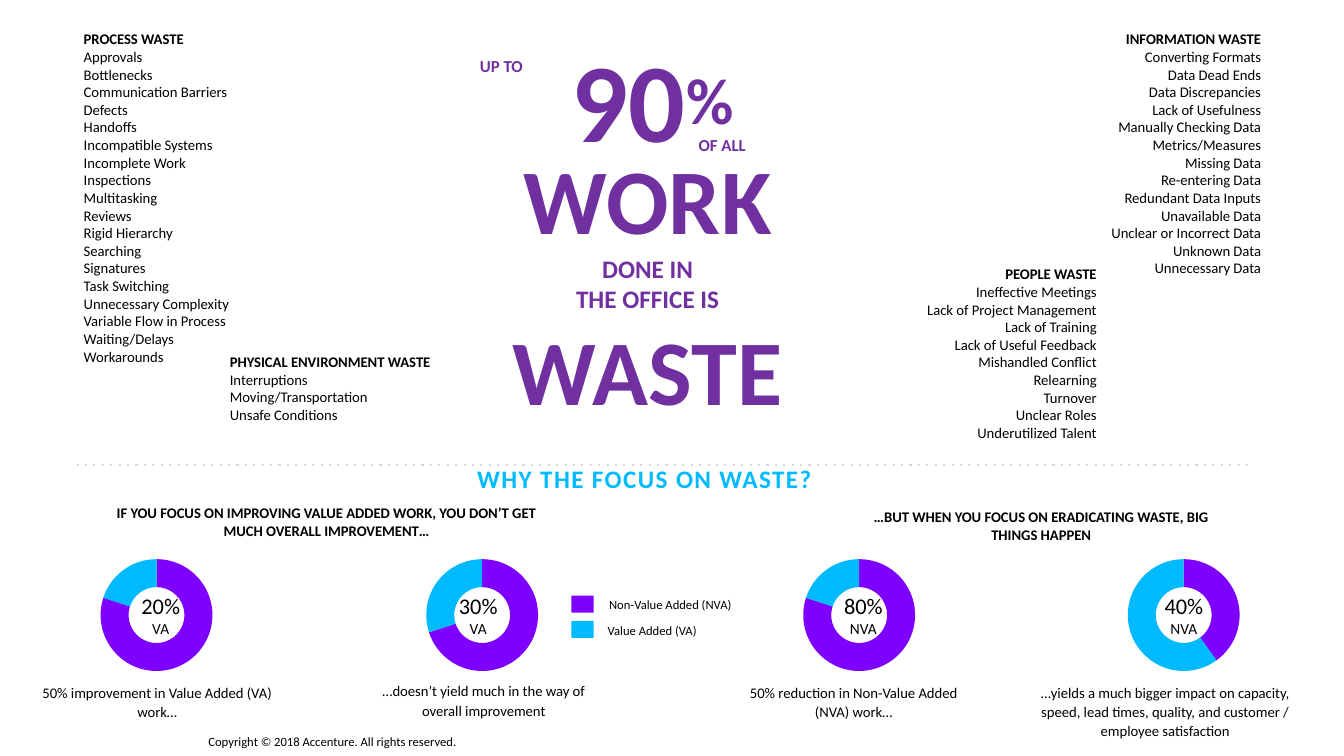
from lxml import etree
from pptx import Presentation
from pptx import util as u
from pptx.chart import data
from pptx.dml.color import RGBColor
from pptx.enum import chart as charts, shapes, text
from pptx.oxml import parse_xml
from pptx.oxml.ns import nsdecls, qn

Pt = u.Pt
FONT = "Calibri"
BLACK = RGBColor(0x00, 0x00, 0x00)
PLUM = RGBColor(0x70, 0x30, 0xA0)
VIOLET = RGBColor(0x7E, 0x00, 0xFF)
CYAN = RGBColor(0x00, 0xBA, 0xFF)
GREY = RGBColor(0xD8, 0xD8, 0xD8)
LEFT, MID, RIGHT = text.PP_ALIGN.LEFT, text.PP_ALIGN.CENTER, text.PP_ALIGN.RIGHT

PROCESS = ["PROCESS WASTE", "Approvals", "Bottlenecks", "Communication Barriers",
           "Defects", "Handoffs", "Incompatible Systems", "Incomplete Work",
           "Inspections", "Multitasking", "Reviews", "Rigid Hierarchy", "Searching",
           "Signatures", "Task Switching", "Unnecessary Complexity",
           "Variable Flow in Process", "Waiting/Delays", "Workarounds"]
PLACE = ["PHYSICAL ENVIRONMENT WASTE", "Interruptions", "Moving/Transportation",
         "Unsafe Conditions"]
INFO = ["INFORMATION WASTE", "Converting Formats", "Data Dead Ends",
        "Data Discrepancies", "Lack of Usefulness", "Manually Checking Data",
        "Metrics/Measures", "Missing Data", "Re-entering Data",
        "Redundant Data Inputs", "Unavailable Data", "Unclear or Incorrect Data",
        "Unknown Data", "Unnecessary Data"]
PEOPLE = ["PEOPLE WASTE", "Ineffective Meetings", "Lack of Project Management",
          "Lack of Training", "Lack of Useful Feedback", "Mishandled Conflict",
          "Relearning", "Turnover", "Unclear Roles", "Underutilized Talent"]


def write(slide, box, lines, align=MID, color=BLACK, inset=(0, 0), gap=None):
    """Add a text box; each line is (words, size, bold, tracking in points)."""
    frame = slide.shapes.add_textbox(*map(Pt, box)).text_frame
    frame.word_wrap = True
    frame.margin_left = frame.margin_right = Pt(inset[0])
    frame.margin_top = frame.margin_bottom = Pt(inset[1])
    for i, (words, size, bold, track) in enumerate(lines):
        para = frame.add_paragraph() if i else frame.paragraphs[0]
        para.alignment = align
        if gap:
            para.line_spacing = gap
        font = para.font
        font.name, font.size, font.bold = FONT, Pt(size), bold
        font.color.rgb = color
        run = para.add_run()
        run.text = words
        if track:
            run._r.get_or_add_rPr().set("spc", str(round(track * 100)))
    return frame


def waste(slide, box, names, align):
    """List one kind of waste under its bold heading."""
    lines = [(name, 10.5, i == 0, 0) for i, name in enumerate(names)]
    write(slide, box, lines, align)


def claim(slide, x, y):
    """Set the large central statement."""
    pad = (7.2, 3.6)
    frame = write(slide, (x + 3.6, y, 347.8, 104.4), [("90", 80, True, 0.3)],
                  color=PLUM, inset=pad)
    sign = frame.paragraphs[0].add_run()
    sign.text = "%"
    props = sign._r.get_or_add_rPr()
    props.set("spc", "30")
    props.set("baseline", "16000")
    for words, dx, dy in [("UP TO", 33.8, 18), ("OF ALL", 191.5, 74.9)]:
        write(slide, (x + dx, y + dy, 71.3, 21.6), [(words, 12, True, 0)],
              color=PLUM, inset=pad)
    write(slide, (x, y + 79.9, 347.8, 211),
          [("WORK", 66, True, 0.3), ("DONE IN", 18, True, 0),
           ("THE OFFICE IS", 18, True, 0), ("WASTE", 66, True, 0.3)],
          color=PLUM, inset=pad)


def rule(slide, x, y, w):
    line = slide.shapes.add_connector(shapes.MSO_CONNECTOR.STRAIGHT,
                                      Pt(x), Pt(y), Pt(x + w), Pt(y))
    line.line.color.rgb = GREY
    line.line.width = Pt(1.5)
    props = line._element.spPr
    etree.SubElement(props.find(qn("a:ln")), qn("a:prstDash")).set("val", "dot")
    etree.SubElement(props, qn("a:effectLst"))


def ring(slide, x, y, share):
    """Draw a doughnut with the given non-value-added share."""
    w, h, size = 98.6, 106.6, 80
    info = data.CategoryChartData()
    info.categories = ["1", "2"]
    info.add_series("Series 1", (share, 100 - share))
    chart = slide.shapes.add_chart(charts.XL_CHART_TYPE.DOUGHNUT,
                                   Pt(x), Pt(y), Pt(w), Pt(h), info).chart
    chart.has_legend = chart.has_title = False
    chart.font.name, chart.font.size = FONT, Pt(18)
    chart.font.color.rgb = BLACK
    plot = chart.plots[0]
    plot.vary_by_categories = True
    for i, color in enumerate((VIOLET, CYAN)):
        part = plot.series[0].points[i].format
        part.fill.solid()
        part.fill.fore_color.rgb = color
        part.line.fill.background()
    area = chart._chartSpace.find(".//" + qn("c:plotArea"))
    area.find(".//" + qn("c:holeSize")).set("val", "80")
    old = area.find(qn("c:layout"))
    if old is not None:
        area.remove(old)
    spots = {"x": (1 - size / w) / 2, "y": (1 - size / h) / 2,
             "w": size / w, "h": size / h}
    marks = "".join(f'<c:{k} val="{v:.3f}"/>' for k, v in spots.items())
    area.insert(0, parse_xml(
        f'<c:layout {nsdecls("c")}><c:manualLayout><c:layoutTarget val="inner"/>'
        f'<c:xMode val="edge"/><c:yMode val="edge"/>{marks}'
        '</c:manualLayout></c:layout>'))


def result(slide, x, y, share, label, unit, shift, note, box):
    """Place a ring, its inner label and the note below it."""
    ring(slide, x, y, share)
    write(slide, (x + shift, y + 37.2, 46.8, 33.1),
          [(label, 16, False, 0), (unit, 11, False, 0)])
    dx, dy, w, h = box
    write(slide, (x + dx, y + dy, w, h), [(note, 10.5, False, 0)], gap=1.1)


def legend(slide, x, y):
    keys = [("Non-Value Added (NVA)", VIOLET, 110.9), ("Value Added (VA)", CYAN, 85)]
    for i, (name, color, w) in enumerate(keys):
        top = y + 18 * i
        key = slide.shapes.add_shape(shapes.MSO_SHAPE.RECTANGLE,
                                     Pt(x), Pt(top), Pt(15.8), Pt(12.2))
        key.shadow.inherit = False
        key.fill.solid()
        key.fill.fore_color.rgb = color
        key.line.fill.background()
        write(slide, (x + 15.1, top, w, 13), [(name, 9, False, 0)], gap=1.1)


def focus(slide, x, y):
    """Fill the lower half: title, two findings, four rings and the key."""
    rule(slide, x, y, 840.2)
    write(slide, (x + 246.2, y - 0.7, 319, 21.6),
          [("WHY THE FOCUS ON WASTE?", 18, True, 1)], color=CYAN)
    heads = [
        (27.4, 28.1, 302.4, "IF YOU FOCUS ON IMPROVING VALUE ADDED WORK, "
         "YOU DON’T GET MUCH OVERALL IMPROVEMENT…"),
        (554.4, 31, 269.3, "…BUT WHEN YOU FOCUS ON ERADICATING WASTE, "
         "BIG THINGS HAPPEN")]
    for dx, dy, w, words in heads:
        write(slide, (x + dx, y + dy, w, 25.2), [(words, 10.5, True, 0)])
    rings = [
        (7.9, 80, "20%", "VA", 28.8, "50% improvement in Value Added (VA) work…",
         (-33.8, 101.2, 167, 31)),
        (240.5, 70, "30%", "VA", 23, "…doesn’t yield much in the way of overall "
         "improvement", (-33.1, 100, 167, 31)),
        (509.8, 80, "80%", "NVA", 28.8, "50% reduction in Non-Value Added (NVA) work…",
         (-38.2, 101.2, 167, 31)),
        (741.6, 40, "40%", "NVA", 25.9, "…yields a much bigger impact on capacity, "
         "speed, lead times, quality, and customer / employee satisfaction",
         (-62.6, 100.8, 197.3, 43.2))]
    for dx, *rest in rings:
        result(slide, x + dx, y + 54.2, *rest)
    legend(slide, x + 353.5, y + 93.6)


def main():
    deck = Presentation()
    deck.slide_width, deck.slide_height = Pt(960), Pt(540)
    slide = deck.slides.add_slide(deck.slide_layouts[6])
    waste(slide, (59.8, 21.6, 139, 261.4), PROCESS, LEFT)
    waste(slide, (164.2, 252, 146.9, 67), PLACE, LEFT)
    waste(slide, (761.8, 21.6, 139, 175), INFO, RIGHT)
    waste(slide, (644.4, 189.4, 139, 126), PEOPLE, RIGHT)
    claim(slide, 288.7, 18)
    focus(slide, 54.7, 331.9)
    write(slide, (141.8, 520.6, 324, 10.8),
          [("Copyright © 2018 Accenture. All rights reserved.", 9, False, 0)],
          LEFT, inset=(7.2, 3.6))
    deck.save("out.pptx")


if __name__ == "__main__":
    main()
